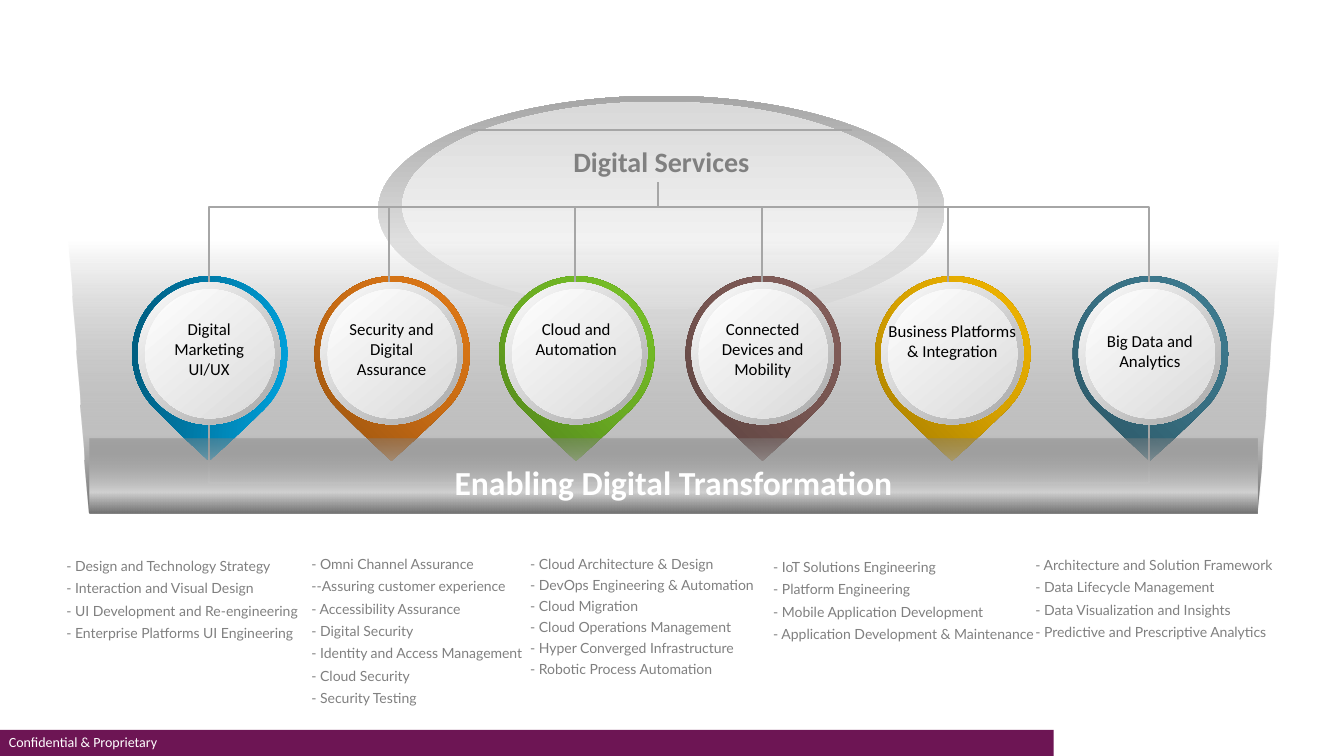
from lxml import etree
from pptx import Presentation
from pptx.dml.color import RGBColor
from pptx.enum.shapes import MSO_CONNECTOR as Link, MSO_SHAPE as Preset
from pptx.enum.text import MSO_ANCHOR as Anchor, MSO_AUTO_SIZE as AutoSize, PP_ALIGN as Align
from pptx.oxml import parse_xml
from pptx.oxml.ns import nsdecls, qn
from pptx.util import Inches, Pt

UNIT = Inches(1)  # the grid has 13.33 columns and 7.5 rows
COLUMNS, ROWS = 13.33, 7.5
RULE = "A6A6A6"
RIM = [(0, "FFFFFF"), (100, "A6A6A6")]
FACE = [(0, "FFFFFF"), (100, "D9D9D9")]

# Pin: centre column, label top, label, gradient angle, gradient stops
PINS = [
    (2.08, 3.11, "Digital\nMarketing\nUI/UX", 50, [(0, "00B0F0"), (100, "004D6A")]),
    (3.89, 3.11, "Security and\nDigital\nAssurance", 180,
     [(0, "8C4C0E"), (50, "C86C14"), (100, "ED8018")]),
    (5.72, 3.11, "Cloud and\nAutomation", 180,
     [(0, "4B7918"), (50, "6BAD23"), (100, "7ECD29")]),
    (7.57, 3.11, "Connected\nDevices and\nMobility", 180,
     [(0, "533C39"), (50, "775551"), (100, "8D6560")]),
    (9.45, 3.13, "Business Platforms\n& Integration", 180,
     [(0, "977200"), (50, "D7A200"), (100, "FFC000")]),
    (11.41, 3.23, "Big Data and\nAnalytics", 180,
     [(0, "274E5B"), (50, "386F82"), (100, "42849A")]),
]

# Service list: box, space before each line, lines
SERVICES = [
    ((0.56, 5.48, 2.65, 0.94), 4, [
        "- Design and Technology Strategy", "- Interaction and Visual Design",
        "- UI Development and Re-engineering", "- Enterprise Platforms UI Engineering"]),
    ((2.99, 5.46, 2.65, 1.84), 4, [
        "- Omni Channel Assurance", "--Assuring customer experience",
        "- Accessibility Assurance", "- Digital Security",
        "- Identity and Access Management", "- Cloud Security", "- Security Testing"]),
    ((5.16, 5.46, 2.65, 1.53), 3, [
        "- Cloud Architecture & Design", "- DevOps Engineering & Automation",
        "- Cloud Migration", "- Cloud Operations Management",
        "- Hyper Converged Infrastructure", "- Robotic Process Automation"]),
    ((7.57, 5.49, 2.99, 0.94), 4, [
        "- IoT Solutions Engineering", "- Platform Engineering",
        "- Mobile Application Development", "- Application Development & Maintenance"]),
    ((10.17, 5.47, 2.99, 0.94), 4, [
        "- Architecture and Solution Framework", "- Data Lifecycle Management",
        "- Data Visualization and Insights", "- Predictive and Prescriptive Analytics"]),
]


def color(value):
    return RGBColor.from_string(value)


def grid(*lengths):
    return [round(length * UNIT) for length in lengths]


def paint_gradient(shape, stops, angle):
    """Stops are (position, colour) or (position, colour, opacity), in percent."""
    shape.shadow.inherit = False
    shape.line.fill.background()
    shape.fill.background()
    gradient = parse_xml(f'<a:gradFill {nsdecls("a")} rotWithShape="1"><a:gsLst/>'
                         f'<a:lin ang="{angle * 60000}" scaled="0"/></a:gradFill>')
    for position, value, *opacity in stops:
        stop = etree.SubElement(gradient[0], qn("a:gs"), pos=str(position * 1000))
        tint = etree.SubElement(stop, qn("a:srgbClr"), val=value)
        if opacity:
            etree.SubElement(tint, qn("a:alpha"), val=str(opacity[0] * 1000))
    properties = shape.element.spPr
    properties.replace(properties.find(qn("a:noFill")), gradient)


def add_gradient_shape(page, preset, box, stops, angle):
    shape = page.shapes.add_shape(preset, *grid(*box))
    paint_gradient(shape, stops, angle)
    return shape


def add_rule(page, start, end, width=1.5):
    rule = page.shapes.add_connector(Link.STRAIGHT, *grid(*start, *end))
    rule.line.color.rgb = color(RULE)
    rule.line.width = Pt(width)
    etree.SubElement(rule.element.spPr, qn("a:effectLst"))


def write(shape, text, size, value, font="Calibri", bold=False, align=Align.CENTER, gap=0):
    frame = shape.text_frame
    frame.text = text
    frame.word_wrap = True
    for index, para in enumerate(frame.paragraphs):
        para.alignment = align
        para.space_before = Pt(gap if index else 0)
        for span in para.runs:
            span.font.size, span.font.name, span.font.bold = Pt(size), font, bold
            span.font.color.rgb = color(value)


def add_text(page, box, text, size, value, **style):
    write(page.shapes.add_textbox(*grid(*box)), text, size, value, **style)


def add_footer(page, box):
    left, top, width, height = box
    bar = page.shapes.add_shape(Preset.RECTANGLE, *grid(*box))
    bar.shadow.inherit = False
    bar.fill.solid()
    bar.fill.fore_color.rgb = color("6D1554")
    bar.line.fill.background()
    add_text(page, (left - 0.01, top - 0.01, 3.34, height), "Confidential & Proprietary",
             10, "FFFFFF", align=Align.LEFT)


def add_dome(page, box):
    left, top, width, height = box
    add_gradient_shape(page, Preset.OVAL, box, RIM, 270)
    add_gradient_shape(page, Preset.OVAL, (left + 0.24, top + 0.06, 5.11, 2.06), FACE, 270)


def add_title(page, box):
    title = page.shapes.title
    title.left, title.top, title.width, title.height = grid(*box)
    write(title, "Digital Services", 20, "808080", bold=True)
    title.text_frame.auto_size = AutoSize.NONE
    title.text_frame.vertical_anchor = Anchor.MIDDLE
    page.shapes.element.append(title.element)  # bring in front of the dome


def add_stage(page, box):
    left, top, width, height = box
    right, bottom = left + width, top + height
    corners = [(left + 0.2, bottom), (left, top), (right, top), (right - 0.21, bottom - 0.03)]
    points = [(round(x * 100), round(y * 100)) for x, y in corners]
    builder = page.shapes.build_freeform(*points[0], scale=UNIT / 100)
    builder.add_line_segments(points[1:], close=True)
    paint_gradient(builder.convert_to_shape(),
                   [(0, "6F6F6F"), (29, "C0C0C0"), (100, "828282", 0)], 270)


def add_pin(page, box, angle, stops):
    pin = add_gradient_shape(page, Preset.TEAR, box, stops, angle)
    pin.adjustments[0] = 0.975
    pin.rotation = 135.4


def add_tree(page, box):
    left, top, width, height = box
    frame = page.shapes.add_shape(Preset.RECTANGLE, *grid(*box))
    frame.shadow.inherit = False
    frame.fill.background()
    frame.line.color.rgb = color(RULE)
    frame.line.width = Pt(1.5)
    for branch in range(4):
        x = left + 1.79 + branch * 1.847
        add_rule(page, (x, top), (x, top + 0.76))


def add_disc(page, box, label_top, label):
    left, top, size, _ = box
    add_gradient_shape(page, Preset.OVAL, box, RIM, 50)
    add_gradient_shape(page, Preset.OVAL, (left + 0.07, top + 0.07, 1.28, 1.28), FACE, 50)
    lines = label.count("\n") + 1
    add_text(page, (left - 0.3, label_top, size + 0.6, 0.1 + 0.2 * lines), label, 12, "000000")


def add_band(page, box):
    left, top, width, height = box
    add_gradient_shape(page, Preset.RECTANGLE, box,
                       [(0, "6F6F6F"), (29, "D1D1D1"), (100, "828282", 43)], 270)
    add_text(page, (left, top + 0.18, width, 0.5), "Enabling Digital Transformation",
             24, "FFFFFF", bold=True)


def build_services_page(deck):
    page = deck.slides.add_slide(deck.slide_layouts[5])
    add_footer(page, (0, 7.24, 10.45, 0.26))
    add_dome(page, (3.75, 0.95, 5.62, 2.27))
    add_stage(page, (0.68, 2.4, 12, 2.68))
    for center, _, _, angle, stops in PINS:
        add_pin(page, (center - 0.77, 2.74, 1.54, 1.54), angle, stops)
    add_title(page, (3.75, 1.38, 5.62, 0.44))
    add_tree(page, (2.07, 2.05, 9.33, 2.74))
    for center, label_top, label, _, _ in PINS:
        add_disc(page, (center - 0.71, 2.8, 1.41, 1.41), label_top, label)
    add_band(page, (0.89, 4.35, 11.58, 0.74))
    # Stem and line around the title
    add_rule(page, (6.53, 1.81), (6.53, 2.05))
    add_rule(page, (4.67, 1.29), (8.45, 1.29), 0.75)
    for box, gap, lines in SERVICES:
        add_text(page, box, "\n".join(lines), 10, "808080", font="Lato",
                 align=Align.LEFT, gap=gap)


def main():
    deck = Presentation()
    deck.slide_width, deck.slide_height = grid(COLUMNS, ROWS)
    build_services_page(deck)
    deck.save("out.pptx")


if __name__ == "__main__":
    main()
